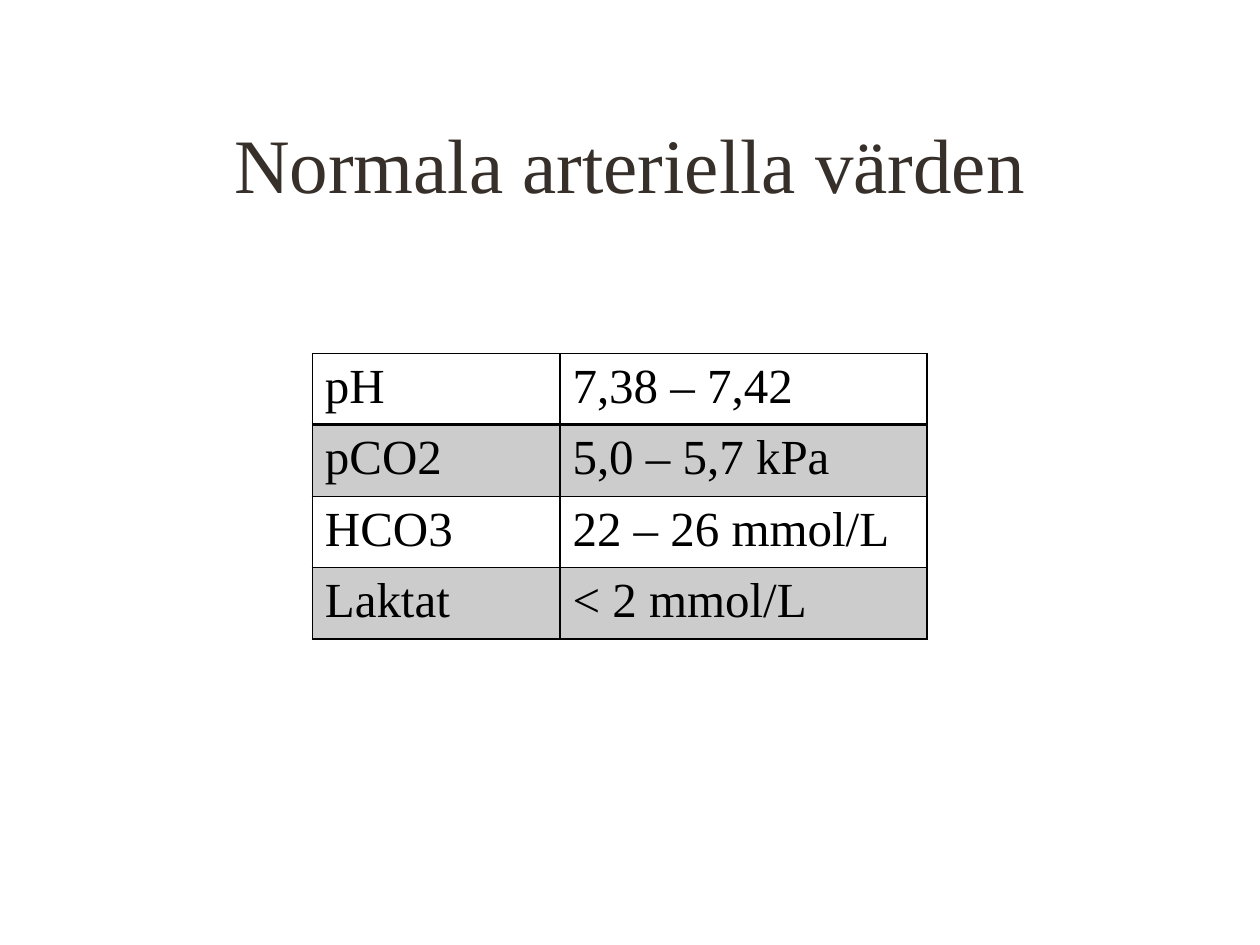
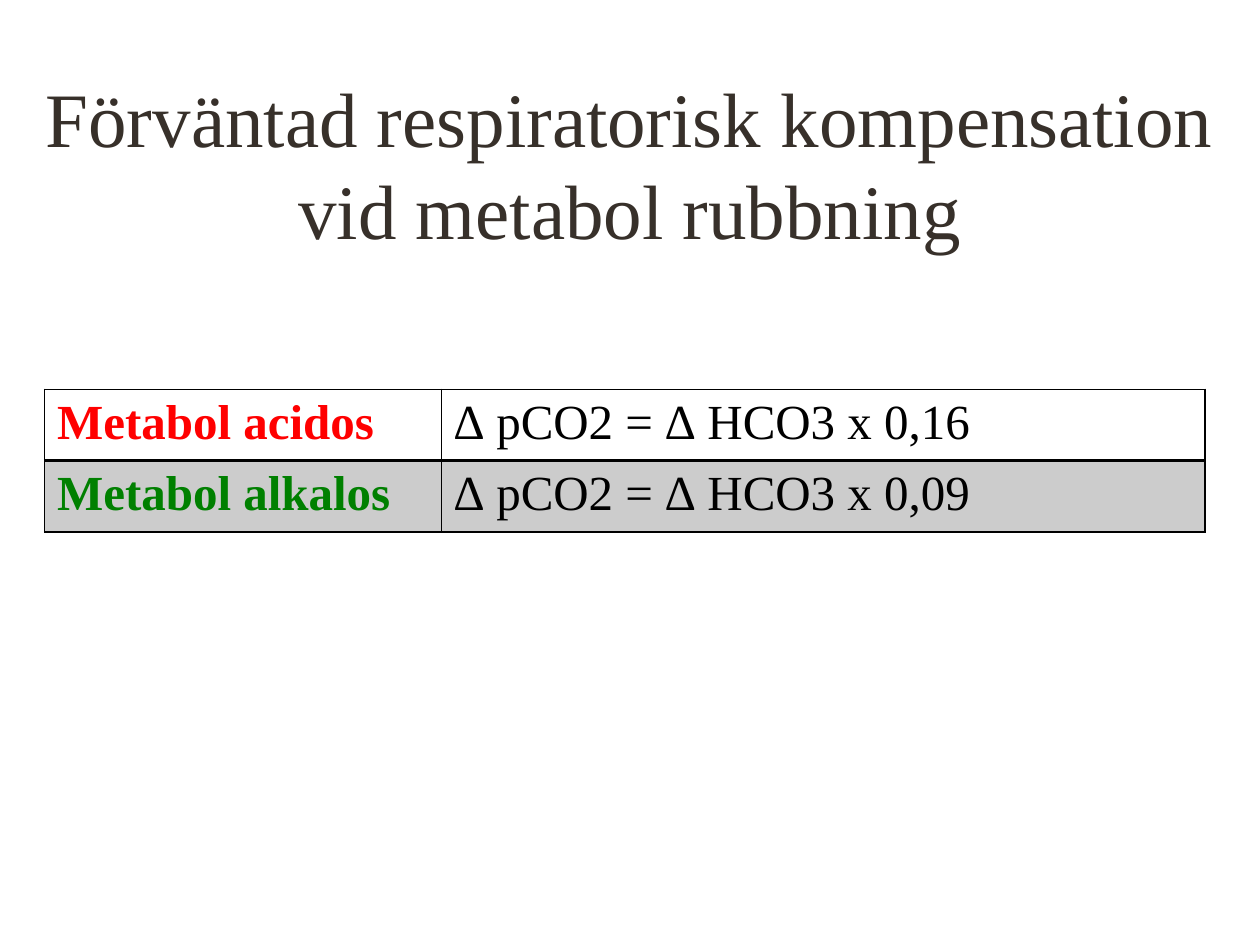
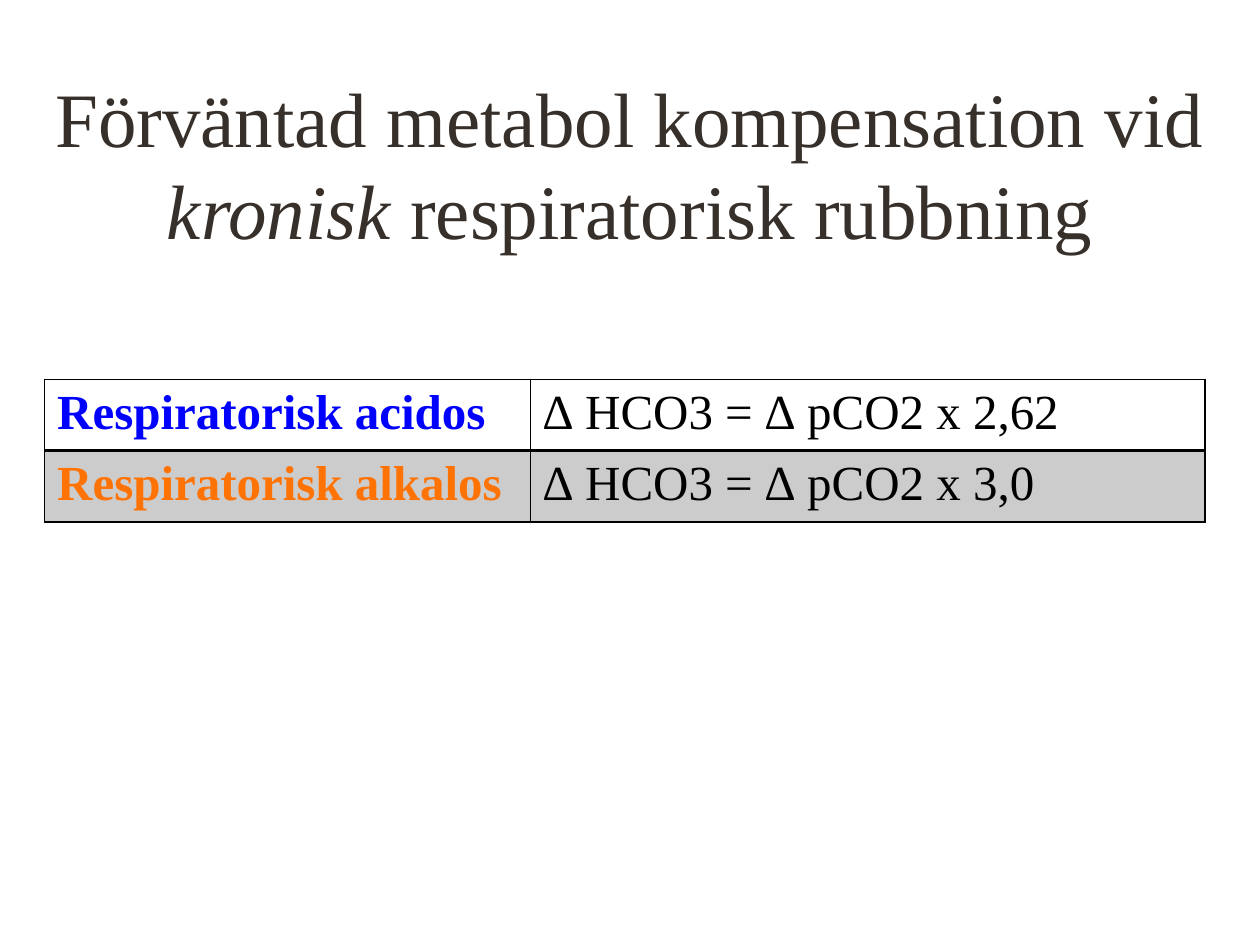
from lxml.etree import SubElement
from pptx import Presentation
from pptx.dml.color import RGBColor
from pptx.enum.text import MSO_ANCHOR, MSO_AUTO_SIZE, PP_ALIGN
from pptx.oxml.ns import qn
from pptx.util import Pt

FONT = "Times New Roman"
TITLE_COLOR = RGBColor(0x37, 0x30, 0x2A)
BLACK = RGBColor(0, 0, 0)
RED = RGBColor(0xFF, 0, 0)
GREEN = RGBColor(0, 0x80, 0)
BLUE = RGBColor(0, 0, 0xFF)
ORANGE = RGBColor(0xFF, 0x73, 0x05)

TITLE_SIZE = 44
TABLE_SIZE = 28
ROW_HEIGHT = 40.8
THIN, THICK = 1, 2
BAND_OPACITY = 20
TITLE_TOP, TITLE_HEIGHT = 48, 90
NARROW_TITLE = (54, TITLE_TOP, 612, TITLE_HEIGHT)
WIDE_TITLE = (0, TITLE_TOP, 720, TITLE_HEIGHT)


def style_span(span, size, color, bold=False, italic=False):
    font = span.font
    font.name = FONT
    font.size = Pt(size)
    font.color.rgb = color
    font.bold = bold
    font.italic = italic


def add_title(page, box, parts, emphasis=None):
    title = page.shapes.title
    title.left, title.top, title.width, title.height = map(Pt, box)
    frame = title.text_frame
    frame.word_wrap = True
    frame.auto_size = MSO_AUTO_SIZE.NONE
    frame.vertical_anchor = MSO_ANCHOR.MIDDLE
    para = frame.paragraphs[0]
    para.alignment = PP_ALIGN.CENTER
    for part in parts:
        span = para.add_run()
        span.text = part
        style_span(span, TITLE_SIZE, TITLE_COLOR, italic=part == emphasis)


def add_border(cell, side, width):
    line = SubElement(cell._tc.get_or_add_tcPr(), qn(f"a:ln{side}"), w=str(Pt(width)))
    fill = SubElement(line, qn("a:solidFill"))
    SubElement(fill, qn("a:srgbClr"), val=str(BLACK))


def fill_cell(cell, banded):
    if not banded:
        cell.fill.background()
        return
    cell.fill.solid()
    cell.fill.fore_color.rgb = BLACK
    color = cell._tc.tcPr.find(qn("a:solidFill")).find(qn("a:srgbClr"))
    SubElement(color, qn("a:alpha"), val=str(BAND_OPACITY * 1000))


def add_value_table(page, left, top, widths, rows, label_colors=None):
    shape = page.shapes.add_table(
        len(rows), len(widths), Pt(left), Pt(top), Pt(sum(widths)), Pt(ROW_HEIGHT * len(rows))
    )
    table = shape.table
    table.first_row = False
    table.horz_banding = False
    for column, width in zip(table.columns, widths):
        column.width = Pt(width)
    for row_index, texts in enumerate(rows):
        table.rows[row_index].height = Pt(ROW_HEIGHT)
        for column_index, text in enumerate(texts):
            cell = table.cell(row_index, column_index)
            cell.text_frame.text = text
            is_label = label_colors is not None and column_index == 0
            color = label_colors[row_index] if is_label else BLACK
            style_span(cell.text_frame.paragraphs[0].runs[0], TABLE_SIZE, color, bold=is_label)
            add_border(cell, "L", THIN)
            add_border(cell, "R", THIN)
            add_border(cell, "T", THICK if row_index == 1 else THIN)
            add_border(cell, "B", THICK if row_index == 0 else THIN)
            fill_cell(cell, banded=row_index % 2 == 1)


def add_page(deck):
    return deck.slides.add_slide(deck.slide_layouts[5])


def add_normal_values(deck):
    page = add_page(deck)
    add_title(page, NARROW_TITLE, ["Normala arteriella värden"])
    rows = [
        ("pH", "7,38 – 7,42"),
        ("pCO2", "5,0 – 5,7 kPa"),
        ("HCO3", "22 – 26 mmol/L"),
        ("Laktat", "< 2 mmol/L"),
    ]
    add_value_table(page, 178.5, 202, (141.5, 209.8), rows)


def add_respiratory_compensation(deck):
    page = add_page(deck)
    add_title(page, WIDE_TITLE, ["Förväntad respiratorisk kompensation vid metabol rubbning"])
    rows = [
        ("Metabol acidos", "∆ pCO2 = ∆ HCO3 x 0,16"),
        ("Metabol alkalos", "∆ pCO2 = ∆ HCO3 x 0,09"),
    ]
    add_value_table(page, 25.5, 222.5, (226.8, 436.4), rows, (RED, GREEN))


def add_metabolic_compensation(deck):
    page = add_page(deck)
    parts = ["Förväntad metabol kompensation vid ", "kronisk", " respiratorisk rubbning"]
    add_title(page, WIDE_TITLE, parts, emphasis="kronisk")
    rows = [
        ("Respiratorisk acidos", "∆ HCO3 = ∆ pCO2 x 2,62"),
        ("Respiratorisk alkalos", "∆ HCO3 = ∆ pCO2 x 3,0"),
    ]
    add_value_table(page, 25.5, 216.8, (277.6, 385.6), rows, (BLUE, ORANGE))


def main():
    deck = Presentation()
    deck.slide_width, deck.slide_height = Pt(720), Pt(540)
    add_normal_values(deck)
    add_respiratory_compensation(deck)
    add_metabolic_compensation(deck)
    deck.save("out.pptx")


if __name__ == "__main__":
    main()
